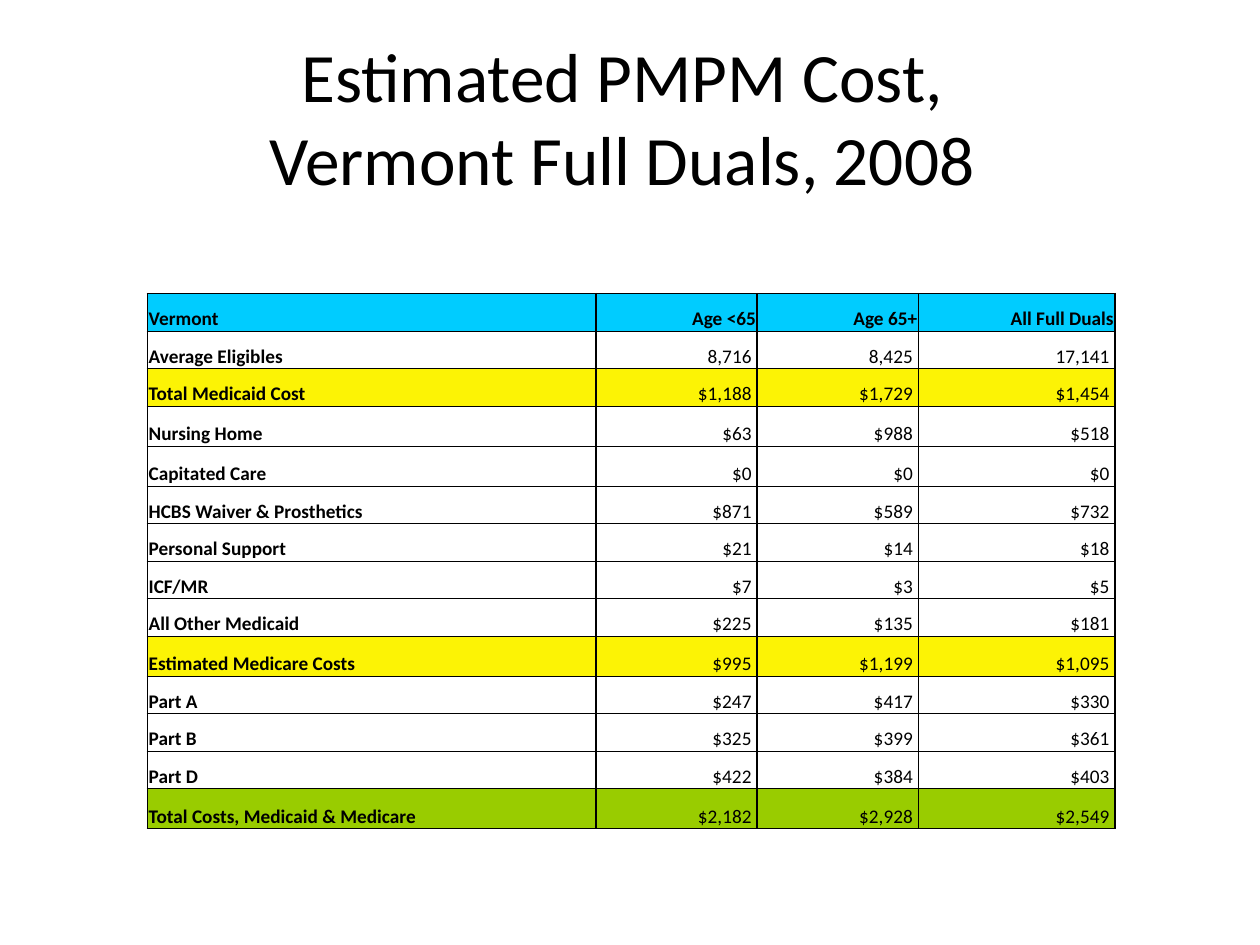
from lxml import etree
from pptx import Presentation
from pptx.dml.color import RGBColor
from pptx.enum.text import MSO_ANCHOR, PP_ALIGN
from pptx.oxml.ns import qn
from pptx.util import Inches, Pt

LEFT, CENTER, RIGHT = PP_ALIGN.LEFT, PP_ALIGN.CENTER, PP_ALIGN.RIGHT
MIDDLE, BOTTOM = MSO_ANCHOR.MIDDLE, MSO_ANCHOR.BOTTOM

BLACK = RGBColor(0x00, 0x00, 0x00)
WHITE = RGBColor(0xFF, 0xFF, 0xFF)
BLUE = RGBColor(0x00, 0xCC, 0xFF)
YELLOW = RGBColor(0xFC, 0xF3, 0x05)
GREEN = RGBColor(0x99, 0xCC, 0x00)

FONT = "Calibri"
THICK, THIN = Pt(1), Pt(0.5)
TABLE_HEIGHT = 4.25
COLS = (3.56, 1.28, 1.28, 1.56)
LOW, HIGH = 0.3, 0.32

# Each row: height, fill, label and values
ROWS = (
    (LOW, BLUE, "Vermont", "Age <65", "Age 65+", "All Full Duals"),
    (LOW, WHITE, "Average Eligibles", "8,716", "8,425", "17,141"),
    (LOW, YELLOW, "Total Medicaid Cost", "$1,188", "$1,729", "$1,454"),
    (HIGH, WHITE, "Nursing Home", "$63", "$988", "$518"),
    (HIGH, WHITE, "Capitated Care", "$0", "$0", "$0"),
    (LOW, WHITE, "HCBS Waiver & Prosthetics", "$871", "$589", "$732"),
    (LOW, WHITE, "Personal Support", "$21", "$14", "$18"),
    (LOW, WHITE, "ICF/MR", "$7", "$3", "$5"),
    (LOW, WHITE, "All Other Medicaid", "$225", "$135", "$181"),
    (HIGH, YELLOW, "Estimated Medicare Costs", "$995", "$1,199", "$1,095"),
    (LOW, WHITE, "Part A", "$247", "$417", "$330"),
    (LOW, WHITE, "Part B", "$325", "$399", "$361"),
    (LOW, WHITE, "Part D", "$422", "$384", "$403"),
    (HIGH, GREEN, "Total Costs, Medicaid & Medicare", "$2,182", "$2,928", "$2,549"),
)


def style_text(frame, size, bold, align):
    for para in frame.paragraphs:
        para.alignment = align
        for run in para.runs:
            font = run.font
            font.name, font.size, font.bold = FONT, Pt(size), bold
            font.color.rgb = BLACK


def add_title(slide):
    title = slide.shapes.title
    title.left, title.top = Inches(0.5), Inches(0.3)
    title.width, title.height = Inches(9), Inches(1.25)
    frame = title.text_frame
    frame.vertical_anchor = MIDDLE
    frame.word_wrap = True
    frame.text = "Estimated PMPM Cost, \vVermont Full Duals, 2008 "
    style_text(frame, 39.6, False, CENTER)


def set_borders(cell, top, bottom):
    """Draw thick sides, with the given widths above and below."""
    props = cell._tc.get_or_add_tcPr()
    sides = (("L", THICK), ("R", THICK), ("T", top), ("B", bottom))
    for side, width in sides:
        line = etree.SubElement(props, qn(f"a:ln{side}"), w=str(width))
        fill = etree.SubElement(line, qn("a:solidFill"))
        etree.SubElement(fill, qn("a:srgbClr"), val=str(BLACK))


def fill_cell(cell, text, color, bold, align):
    cell.fill.solid()
    cell.fill.fore_color.rgb = color
    cell.vertical_anchor = BOTTOM
    cell.margin_left = cell.margin_right = cell.margin_top = Inches(0.01)
    cell.margin_bottom = 0
    cell.text_frame.text = text
    style_text(cell.text_frame, 11, bold, align)


def add_costs(slide):
    frame = slide.shapes.add_table(
        len(ROWS), len(COLS), Inches(1.17), Inches(2.33),
        Inches(sum(COLS)), Inches(TABLE_HEIGHT))
    table = frame.table
    table.first_row = table.horz_banding = False
    for col, width in zip(table.columns, COLS):
        col.width = Inches(width)
    scale = TABLE_HEIGHT / sum(row[0] for row in ROWS)
    last = len(ROWS) - 1
    for r, (height, color, *texts) in enumerate(ROWS):
        table.rows[r].height = Inches(height * scale)
        for c, text in enumerate(texts):
            cell = table.cell(r, c)
            value = r > 0 and c > 0
            set_borders(cell, THIN if r else THICK, THIN if r < last else THICK)
            fill_cell(cell, f" {text} " if value else text, color,
                      not value, RIGHT if c else LEFT)


def main():
    deck = Presentation()
    deck.slide_width, deck.slide_height = Inches(10), Inches(7.5)
    slide = deck.slides.add_slide(deck.slide_layouts[5])
    add_title(slide)
    add_costs(slide)
    deck.save("out.pptx")


if __name__ == "__main__":
    main()
